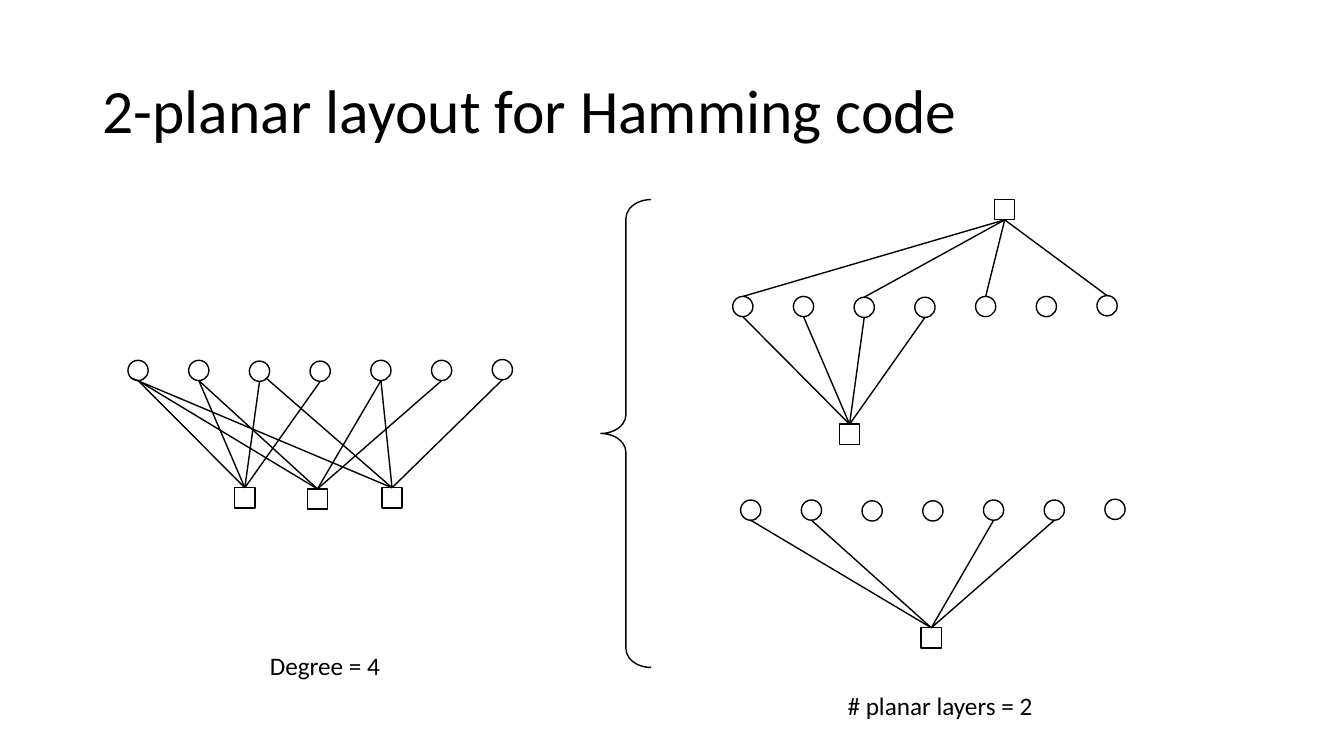
from lxml import etree
from pptx import Presentation
from pptx.dml.color import RGBColor
from pptx.enum.shapes import MSO_CONNECTOR, MSO_SHAPE as SHAPE
from pptx.enum.text import MSO_ANCHOR, MSO_AUTO_SIZE, PP_ALIGN
from pptx.oxml.ns import qn
from pptx.util import Cm, Pt

BLACK = RGBColor(0, 0, 0)
WHITE = RGBColor(255, 255, 255)
FONT = "Calibri"
NODE = 0.51  # node size, cm
PITCH = 1.53  # distance between bit centres, cm
BIT_SHIFTS = (0, 0, 0.02, 0.02, 0, 0, -0.02)  # vertical, cm
CORNER = 0.18, 0.07  # sideways and upward offset of an edge end, cm


def style_text(tf, size):
    for p in tf.paragraphs:
        for r in p.runs:
            r.font.name = FONT
            r.font.size = Pt(size)
            r.font.color.rgb = BLACK


def set_title(s, text):
    title = s.shapes.title
    title.left, title.top = Cm(2.33), Cm(1.01)
    title.width, title.height = Cm(29.21), Cm(3.68)
    tf = title.text_frame
    tf.text = text
    tf.vertical_anchor = MSO_ANCHOR.MIDDLE
    tf.paragraphs[0].alignment = PP_ALIGN.LEFT
    tf.paragraphs[0].line_spacing = 0.9
    style_text(tf, 44)


def add_caption(s, text, left, top, width):
    tf = s.shapes.add_textbox(Cm(left), Cm(top), Cm(width), Cm(1.03)).text_frame
    tf.word_wrap = False
    tf.auto_size = MSO_AUTO_SIZE.SHAPE_TO_FIT_TEXT
    tf.text = text
    style_text(tf, 18)


def set_outline(sp):
    sp.line.color.rgb = BLACK
    sp.line.width = Pt(1)


def add_node(group, kind, x, top):
    """Add a bit or check node centred on x."""
    sp = group.shapes.add_shape(kind, Cm(x - NODE / 2), Cm(top), Cm(NODE), Cm(NODE))
    sp.shadow.inherit = False
    sp.fill.solid()
    sp.fill.fore_color.rgb = WHITE
    set_outline(sp)


def add_edge(group, x1, y1, x2, y2):
    line = group.shapes.add_connector(
        MSO_CONNECTOR.STRAIGHT, Cm(x1), Cm(y1), Cm(x2), Cm(y2))
    set_outline(line)
    etree.SubElement(line._element.spPr, qn("a:effectLst"))


def add_graph(s, first_x, row_top, checks):
    """Add seven bits and their checks.

    Each check is (x, top, edges); an edge is (bit number, side), where side
    is -1, 0 or 1 for the left, middle or right of the bit's rim.
    """
    group = s.shapes.add_group_shape()
    bits = [(first_x + i * PITCH, row_top + shift)
            for i, shift in enumerate(BIT_SHIFTS)]
    for x, top in bits:
        add_node(group, SHAPE.OVAL, x, top)
    for check_x, check_top, edges in checks:
        add_node(group, SHAPE.RECTANGLE, check_x, check_top)
        above = check_top < row_top
        start_y = check_top + NODE if above else check_top
        for bit, side in edges:
            x, top = bits[bit - 1]
            end_y = top if above else top + NODE - CORNER[1] * abs(side)
            add_edge(group, check_x, start_y, x + CORNER[0] * side, end_y)


def add_brace(s):
    brace = s.shapes.add_shape(
        SHAPE.LEFT_BRACE, Cm(15.14), Cm(5.03), Cm(1.27), Cm(11.79))
    brace.adjustments[0] = 0.374
    brace.adjustments[1] = 0.5
    brace.shadow.inherit = False
    brace.fill.background()
    set_outline(brace)


def middle(*bits):
    return [(bit, 0) for bit in bits]


def main():
    prs = Presentation()
    prs.slide_width, prs.slide_height = Cm(33.87), Cm(19.05)
    s = prs.slides.add_slide(prs.slide_layouts[5])
    set_title(s, "2-planar layout for Hamming code")
    add_graph(s, 3.48, 9.08, [
        (6.17, 12.29, middle(1, 2, 3, 4)),
        (8.0, 12.32, middle(1, 2, 5, 6)),
        (9.88, 12.29, [(1, -1), (3, 1), (5, 0), (7, 0)]),
    ])
    add_graph(s, 18.92, 12.6, [(23.47, 15.82, middle(1, 2, 5, 6))])
    add_graph(s, 18.72, 7.47, [
        (25.32, 5.03, middle(1, 3, 5, 7)),
        (21.41, 10.69, middle(1, 2, 3, 4)),
    ])
    add_brace(s)
    add_caption(s, "Degree = 4", 6.55, 16.26, 3.33)
    add_caption(s, "# planar layers = 2", 21.11, 17.27, 5.23)
    prs.save("out.pptx")


if __name__ == "__main__":
    main()
